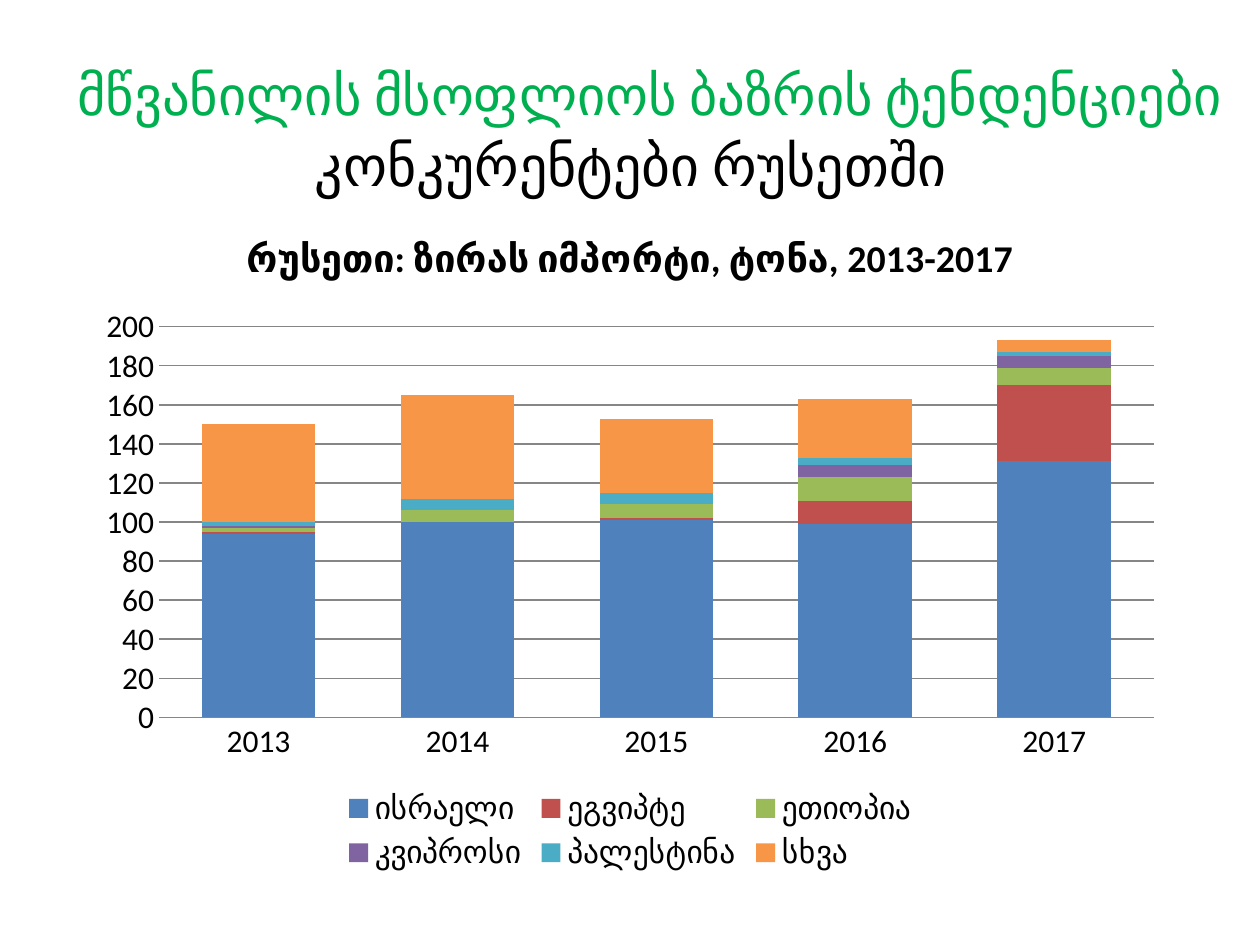
from dataclasses import dataclass

from pptx import Presentation
from pptx.chart.data import CategoryChartData
from pptx.dml.color import RGBColor
from pptx.enum.chart import XL_CHART_TYPE, XL_LEGEND_POSITION, XL_TICK_MARK
from pptx.enum.text import MSO_ANCHOR, PP_ALIGN
from pptx.util import Inches, Pt

STACKED = XL_CHART_TYPE.COLUMN_STACKED
BOTTOM = XL_LEGEND_POSITION.BOTTOM
NO_TICK = XL_TICK_MARK.NONE
TOP, MIDDLE = MSO_ANCHOR.TOP, MSO_ANCHOR.MIDDLE
CENTER = PP_ALIGN.CENTER
FACE, BLACK, GREEN, GRAY = "Calibri", "000000", "00B050", "868686"


@dataclass
class Label:
    text: str
    box: tuple[float, ...]
    size: float
    color: str
    anchor: MSO_ANCHOR


@dataclass
class Land:
    name: str
    tons: tuple[int, ...]
    color: str


LABELS = [
    Label("კონკურენტები რუსეთში", (0.51, 0.99, 9, 0.71), 32, BLACK, TOP),
    Label("მწვანილის მსოფლიოს ბაზრის ტენდენციები", (0.51, 0.12, 9.3, 1.25),
          31.2, GREEN, MIDDLE),
]
YEARS = [str(year) for year in range(2013, 2018)]
LANDS = [
    Land("ისრაელი", (94, 100, 101, 99, 131), "4F81BD"),
    Land("ეგვიპტე", (1, 0, 1, 12, 39), "C0504D"),
    Land("ეთიოპია", (2, 6, 7, 12, 9), "9BBB59"),
    Land("კვიპროსი", (1, 0, 0, 6, 6), "8064A2"),
    Land("პალესტინა", (2, 6, 6, 4, 2), "4BACC6"),
    Land("სხვა", (50, 53, 38, 30, 6), "F79646"),
]


def paint(value: str) -> RGBColor:
    """Turn a hex string into a colour."""
    return RGBColor.from_string(value)


def apply(target, values: dict) -> None:
    """Set each named attribute on the target."""
    for name, value in values.items():
        setattr(target, name, value)


def style(font, size: float, color: str, bold: bool = False) -> None:
    """Format a font."""
    apply(font, {"name": FACE, "size": Pt(size), "bold": bold})
    font.color.rgb = paint(color)


def rule(line) -> None:
    """Format a thin chart line."""
    line.color.rgb = paint(GRAY)
    line.width = Pt(0.75)


def add_label(slide, label: Label) -> None:
    """Add one centred line of text."""
    frame = slide.shapes.add_textbox(*map(Inches, label.box)).text_frame
    apply(frame, {"word_wrap": True, "vertical_anchor": label.anchor,
                  "margin_left": 0, "margin_right": 0})
    para = frame.paragraphs[0]
    para.alignment = CENTER
    run = para.add_run()
    run.text = label.text
    style(run.font, label.size, label.color)


def add_bars(slide) -> None:
    """Add the stacked import chart."""
    data = CategoryChartData()
    data.categories = YEARS
    for land in LANDS:
        data.add_series(land.name, land.tons)
    box = map(Inches, (0.67, 1.62, 8.66, 5.35))
    chart = slide.shapes.add_chart(STACKED, *box, data).chart
    style(chart.font, 18, BLACK)

    chart.has_title = True
    para = chart.chart_title.text_frame.paragraphs[0]
    run = para.add_run()
    run.text = "რუსეთი: ზირას იმპორტი, ტონა, 2013-2017"
    style(run.font, 21.6, BLACK, True)
    chart.chart_title.include_in_layout = False

    chart.has_legend = True
    apply(chart.legend, {"position": BOTTOM, "include_in_layout": False})

    plot = chart.plots[0]
    apply(plot, {"gap_width": 75, "overlap": 100, "vary_by_categories": False})
    for series, land in zip(plot.series, LANDS):
        series.format.fill.solid()
        series.format.fill.fore_color.rgb = paint(land.color)

    ticks = {"major_tick_mark": NO_TICK, "minor_tick_mark": NO_TICK}
    years, tons = chart.category_axis, chart.value_axis
    apply(years, ticks)
    apply(tons, ticks | {"minimum_scale": 0, "maximum_scale": 200,
                         "major_unit": 20, "has_major_gridlines": True})
    rule(years.format.line)
    rule(tons.major_gridlines.format.line)
    tons.format.line.fill.background()


def main() -> None:
    """Build and save the slide."""
    deck = Presentation()
    apply(deck, {"slide_width": Inches(10), "slide_height": Inches(7.5)})
    slide = deck.slides.add_slide(deck.slide_layouts[6])
    add_bars(slide)
    for label in LABELS:
        add_label(slide, label)
    deck.save("out.pptx")


if __name__ == "__main__":
    main()
